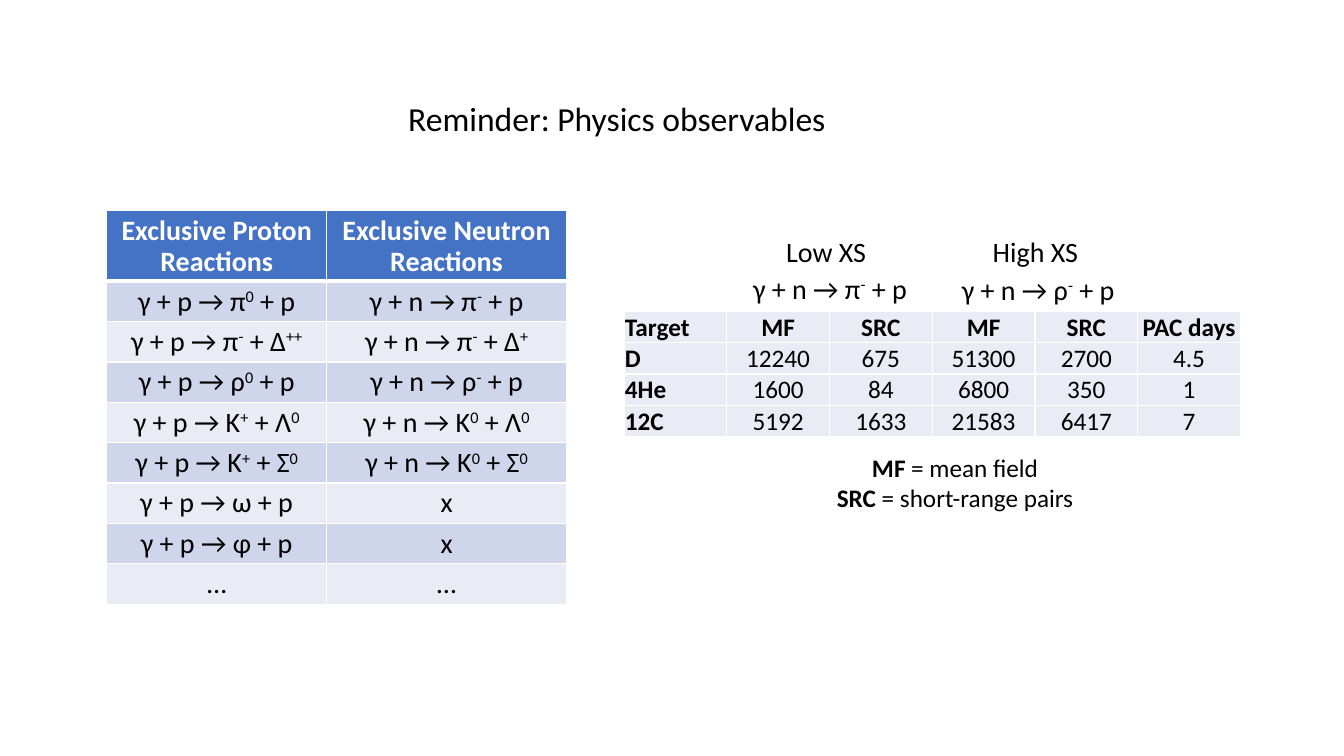
from dataclasses import dataclass, field
from typing import Any, NamedTuple

from lxml.etree import SubElement
from pptx import Presentation
from pptx.dml.color import RGBColor
from pptx.enum.text import MSO_ANCHOR, MSO_AUTO_SIZE, PP_ALIGN
from pptx.oxml import parse_xml
from pptx.oxml.ns import nsdecls, qn
from pptx.util import Pt


@dataclass(frozen=True)
class Theme:
    font: str = "Calibri"
    text: str = "000000"
    white: str = "FFFFFF"
    header: str = "4472C4"
    dark_band: str = "CFD5EA"
    light_band: str = "E9EBF5"
    title_size: float = 24
    body_size: float = 20
    data_size: float = 18


THEME = Theme()


class Span(NamedTuple):
    text: str
    bold: bool = False
    raised: bool = False


class Box(NamedTuple):
    left: float
    top: float
    width: float
    height: float


@dataclass
class Label:
    box: Box
    lines: list[list[Span]]
    size: float = THEME.body_size
    align: PP_ALIGN = PP_ALIGN.CENTER
    spacing: float = 1.0
    wrap: bool = False
    tab: float | None = None


@dataclass
class Grid:
    left: float
    top: float
    columns: list[float]
    rows: list[float]
    texts: list[list[str]]
    size: float
    spacing: float
    fills: list[str]
    bold_header_column: bool
    header_color: str
    header_line: float
    cell_format: dict[str, Any] = field(default_factory=dict)


def apply(target: Any, values: dict[str, Any]) -> None:
    for name, value in values.items():
        setattr(target, name, value)


def spans(text: str, bold: bool = False) -> list[Span]:
    """Text between carets is raised."""
    return [Span(part, bold, index % 2 == 1)
            for index, part in enumerate(text.split("^")) if part]


def write_line(paragraph: Any, line: list[Span], size: float, align: PP_ALIGN,
               spacing: float, color: str = THEME.text) -> None:
    apply(paragraph, {"alignment": align, "line_spacing": spacing, "space_before": Pt(0)})
    for span in line:
        run = paragraph.add_run()
        run.text = span.text
        apply(run.font, {"name": THEME.font, "size": Pt(size), "bold": span.bold})
        run.font.color.rgb = RGBColor.from_string(color)
        if span.raised:
            run._r.get_or_add_rPr().set("baseline", "30000")


def fill_label(shape: Any, label: Label) -> None:
    apply(shape, {name: Pt(value) for name, value in label.box._asdict().items()})
    frame = shape.text_frame
    apply(frame, {"word_wrap": label.wrap, "auto_size": MSO_AUTO_SIZE.SHAPE_TO_FIT_TEXT,
                  "vertical_anchor": MSO_ANCHOR.TOP})
    for index, line in enumerate(label.lines):
        paragraph = frame.add_paragraph() if index else frame.paragraphs[0]
        write_line(paragraph, line, label.size, label.align, label.spacing)
        if label.tab is not None:
            tabs = SubElement(paragraph._p.get_or_add_pPr(), qn("a:tabLst"))
            SubElement(tabs, qn("a:tab"), pos=str(Pt(label.tab)), algn="l")


def set_borders(cell: Any, top: float, bottom: float) -> None:
    properties = cell._tc.get_or_add_tcPr()
    widths = {"lnL": 1, "lnR": 1, "lnT": top, "lnB": bottom}
    for index, (side, width) in enumerate(widths.items()):
        properties.insert(index, parse_xml(
            f'<a:{side} {nsdecls("a")} w="{Pt(width)}"><a:solidFill>'
            f'<a:srgbClr val="{THEME.white}"/></a:solidFill></a:{side}>'))


def add_grid(slide: Any, grid: Grid) -> None:
    frame = slide.shapes.add_table(
        len(grid.rows), len(grid.columns), Pt(grid.left), Pt(grid.top),
        Pt(sum(grid.columns)), Pt(sum(grid.rows)))
    table = frame.table
    for column, width in zip(table.columns, grid.columns):
        column.width = Pt(width)
    for row, height in zip(table.rows, grid.rows):
        row.height = Pt(height)
    for row, texts in enumerate(grid.texts):
        for column, text in enumerate(texts):
            cell = table.cell(row, column)
            apply(cell, grid.cell_format)
            cell.fill.solid()
            cell.fill.fore_color.rgb = RGBColor.from_string(grid.fills[row])
            set_borders(cell, top=grid.header_line if row == 1 else 1,
                        bottom=grid.header_line if row == 0 else 1)
            is_name = grid.bold_header_column and column == 0
            write_line(cell.text_frame.paragraphs[0], spans(text, row == 0 or is_name),
                       grid.size, PP_ALIGN.LEFT if is_name else PP_ALIGN.CENTER,
                       grid.spacing, grid.header_color if row == 0 else THEME.text)


TITLE = Label(Box(284.4, 66.2, 323.3, 36), [spans("Reminder: Physics observables")],
              size=THEME.title_size, align=PP_ALIGN.LEFT)

REACTIONS = Grid(
    left=76.3, top=150.5, columns=[157, 171.4], rows=[50.4] + [28.8] * 8,
    texts=[
        ["Exclusive Proton Reactions", "Exclusive Neutron Reactions"],
        ["γ + p → π^0^ + p", "γ + n → π^-^ + p"],
        ["γ + p → π^-^ + Δ^++^", "γ + n → π^-^ + Δ^+^"],
        ["γ + p → ρ^0^ + p", "γ + n → ρ^-^ + p"],
        ["γ + p → K^+^ + Λ^0^", "γ + n → K^0^ + Λ^0^"],
        ["γ + p → K^+^ + Σ^0^", "γ + n → K^0^ + Σ^0^"],
        ["γ + p → ω + p", "x"],
        ["γ + p → φ + p", "x"],
        ["…", "…"],
    ],
    size=THEME.body_size, spacing=0.9,
    fills=[THEME.header] + [THEME.dark_band, THEME.light_band] * 4,
    bold_header_column=False, header_color=THEME.white, header_line=3,
    cell_format={"vertical_anchor": MSO_ANCHOR.MIDDLE})

YIELDS = Grid(
    left=445.7, top=222.5, columns=[73.4] * 6, rows=[22.3] * 4,
    texts=[
        ["Target", "MF", "SRC", "MF", "SRC", "PAC days"],
        ["D", "12240", "675", "51300", "2700", "4.5"],
        ["4He", "1600", "84", "6800", "350", "1"],
        ["12C", "5192", "1633", "21583", "6417", "7"],
    ],
    size=THEME.data_size, spacing=1.0, fills=[THEME.light_band] * 4,
    bold_header_column=True, header_color=THEME.text, header_line=1,
    cell_format={"vertical_anchor": MSO_ANCHOR.BOTTOM, "margin_left": Pt(0.7),
                 "margin_right": Pt(0.7), "margin_top": Pt(0.7), "margin_bottom": Pt(0)})

LABELS = [
    Label(Box(554.4, 164.2, 284.4, 31.7), [spans("Low XS\tHigh XS")],
          align=PP_ALIGN.LEFT, wrap=True, tab=147.6),
    Label(Box(529.2, 193, 127.4, 28.8), [spans("γ + n → π^-^ + p")], spacing=0.9),
    Label(Box(678.2, 193.7, 126.7, 28.8), [spans("γ + n → ρ^-^ + p")], spacing=0.9),
    Label(Box(589.7, 319.7, 185, 51.1),
          [[Span("MF", bold=True), Span(" = mean field")],
           [Span("SRC", bold=True), Span(" = short-range pairs")]],
          size=THEME.data_size),
]


def main() -> None:
    presentation = Presentation()
    apply(presentation, {"slide_width": Pt(960), "slide_height": Pt(540)})
    slide = presentation.slides.add_slide(presentation.slide_layouts[5])

    # Title and reaction list
    fill_label(slide.shapes.title, TITLE)
    add_grid(slide, REACTIONS)

    # Expected yields with headings and legend
    add_grid(slide, YIELDS)
    for label in LABELS:
        fill_label(slide.shapes.add_textbox(*map(Pt, label.box)), label)

    presentation.save("out.pptx")


if __name__ == "__main__":
    main()
